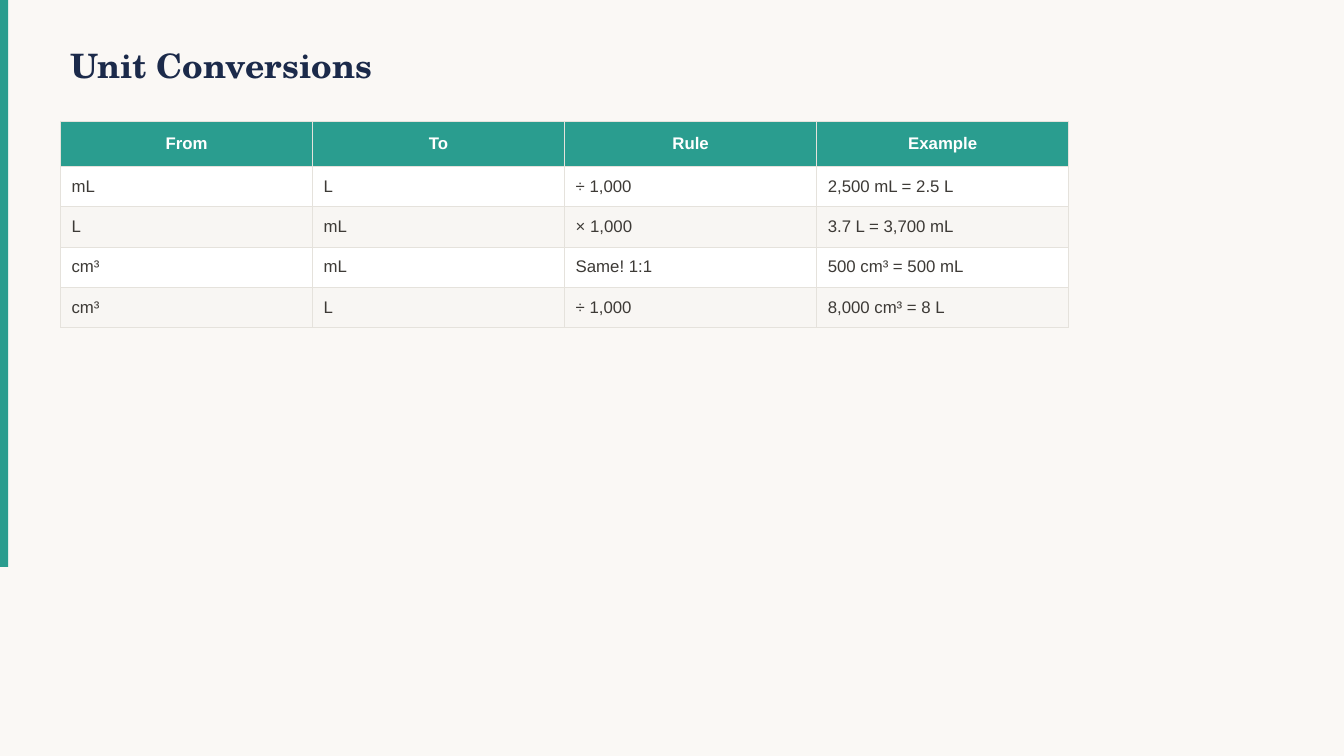
"""Build the Unit Conversions slide."""
from dataclasses import dataclass

from lxml.etree import SubElement
from pptx import Presentation
from pptx.dml.color import RGBColor
from pptx.enum.shapes import MSO_SHAPE
from pptx.enum.text import MSO_ANCHOR, MSO_AUTO_SIZE, PP_ALIGN
from pptx.oxml.ns import qn
from pptx.slide import Slide
from pptx.table import _Cell
from pptx.util import Inches, Pt

CREAM = RGBColor(0xFA, 0xF8, 0xF5)
TEAL = RGBColor(0x2A, 0x9D, 0x8F)
NAVY = RGBColor(0x1B, 0x2A, 0x4A)
WHITE = RGBColor(0xFF, 0xFF, 0xFF)
SAND = RGBColor(0xF8, 0xF6, 0xF3)
INK = RGBColor(0x3D, 0x3A, 0x36)
EDGE = RGBColor(0xE5, 0xE2, 0xDC)

WIDE, HIGH = Inches(13.33), Inches(7.5)
LEFT, SPAN = Inches(0.6), Inches(10)
HEAD, ROW = Inches(0.45), Inches(0.4)

TITLE = {"name": "TeX Gyre Schola", "size": Pt(24), "bold": True}
LABEL = {"name": "Arial", "size": Pt(12), "bold": True}
BODY = {**LABEL, "bold": False}
INSET = {
    "margin_left": Inches(0.11), "margin_right": Inches(0.11),
    "margin_top": Inches(0.06), "margin_bottom": Inches(0.06),
    "vertical_anchor": MSO_ANCHOR.MIDDLE,
}
FRAME = {
    "word_wrap": True, "auto_size": MSO_AUTO_SIZE.NONE,
    "vertical_anchor": MSO_ANCHOR.MIDDLE,
}


@dataclass(frozen=True)
class Look:
    """Fill, text colour, font and alignment of a table row."""
    fill: RGBColor
    ink: RGBColor
    font: dict
    align: PP_ALIGN


@dataclass(frozen=True)
class Rule:
    """One row of the conversion table."""
    start: str
    goal: str
    step: str
    case: str

    def texts(self) -> tuple[str, ...]:
        """Return the cell texts in column order."""
        return self.start, self.goal, self.step, self.case


TOP = Look(TEAL, WHITE, LABEL, PP_ALIGN.CENTER)
BANDS = [Look(fill, INK, BODY, PP_ALIGN.LEFT) for fill in (WHITE, SAND)]
RULES = [
    Rule("From", "To", "Rule", "Example"),
    Rule("mL", "L", "÷ 1,000", "2,500 mL = 2.5 L"),
    Rule("L", "mL", "× 1,000", "3.7 L = 3,700 mL"),
    Rule("cm³", "mL", "Same! 1:1", "500 cm³ = 500 mL"),
    Rule("cm³", "L", "÷ 1,000", "8,000 cm³ = 8 L"),
]


def apply(item: object, form: dict) -> None:
    """Set each attribute of the item from the format values."""
    for key, value in form.items():
        setattr(item, key, value)


def add_edges(cell: _Cell) -> None:
    """Draw a thin line on all four sides of a cell."""
    props = cell._tc.get_or_add_tcPr()
    for side in ("a:lnL", "a:lnR", "a:lnT", "a:lnB"):
        line = SubElement(props, qn(side), w=str(Pt(0.5)))
        fill = SubElement(line, qn("a:solidFill"))
        SubElement(fill, qn("a:srgbClr"), val=str(EDGE))


def fill_cell(cell: _Cell, text: str, look: Look) -> None:
    """Write and format one table cell."""
    add_edges(cell)
    apply(cell, INSET)
    cell.fill.solid()
    cell.fill.fore_color.rgb = look.fill
    cell.text = text
    para = cell.text_frame.paragraphs[0]
    para.alignment = look.align
    apply(para.font, look.font)
    para.font.color.rgb = look.ink


def add_title(slide: Slide, text: str) -> None:
    """Place and format the slide title."""
    title = slide.shapes.title
    apply(title, {"left": LEFT, "top": Inches(0.3),
                  "width": SPAN, "height": Inches(0.7)})
    frame = title.text_frame
    frame.text = text
    apply(frame, FRAME)
    para = frame.paragraphs[0]
    para.alignment = PP_ALIGN.LEFT
    apply(para.font, TITLE)
    para.font.color.rgb = NAVY


def add_bar(slide: Slide) -> None:
    """Draw the accent bar on the left edge."""
    bar = slide.shapes.add_shape(
        MSO_SHAPE.RECTANGLE, 0, 0, Inches(0.08), int(HIGH * 0.75))
    bar.shadow.inherit = False
    bar.fill.solid()
    bar.fill.fore_color.rgb = TEAL
    bar.line.fill.background()


def add_rules(slide: Slide, rules: list[Rule]) -> None:
    """Draw the table with a header and banded rows."""
    cols = len(rules[0].texts())
    tall = HEAD + ROW * (len(rules) - 1)
    table = slide.shapes.add_table(
        len(rules), cols, LEFT, Inches(1.2), SPAN, tall).table
    for row, rule in enumerate(rules):
        table.rows[row].height = ROW if row else HEAD
        look = BANDS[(row - 1) % 2] if row else TOP
        for col, text in enumerate(rule.texts()):
            fill_cell(table.cell(row, col), text, look)


def main() -> None:
    """Build and save the deck."""
    deck = Presentation()
    apply(deck, {"slide_width": WIDE, "slide_height": HIGH})
    slide = deck.slides.add_slide(deck.slide_layouts[5])
    slide.background.fill.solid()
    slide.background.fill.fore_color.rgb = CREAM
    add_bar(slide)
    add_title(slide, "Unit Conversions")
    add_rules(slide, RULES)
    deck.save("out.pptx")


if __name__ == "__main__":
    main()
